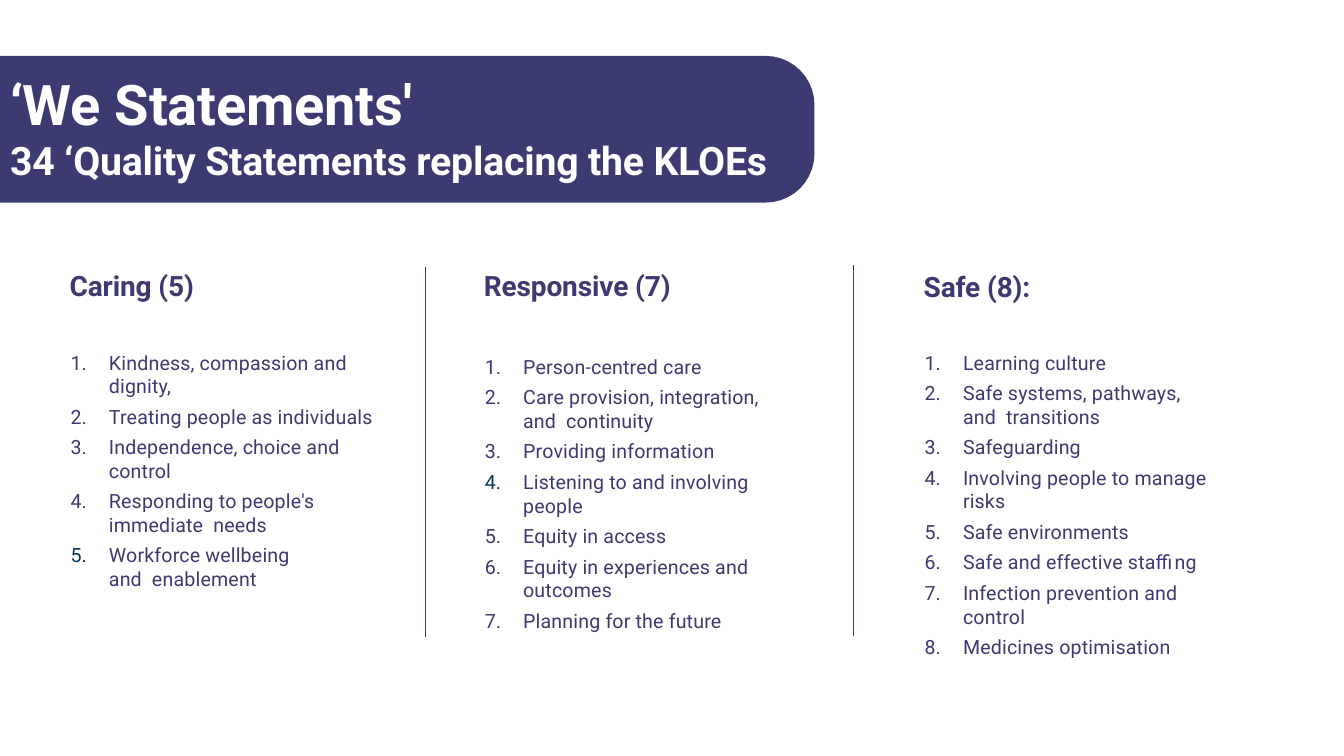
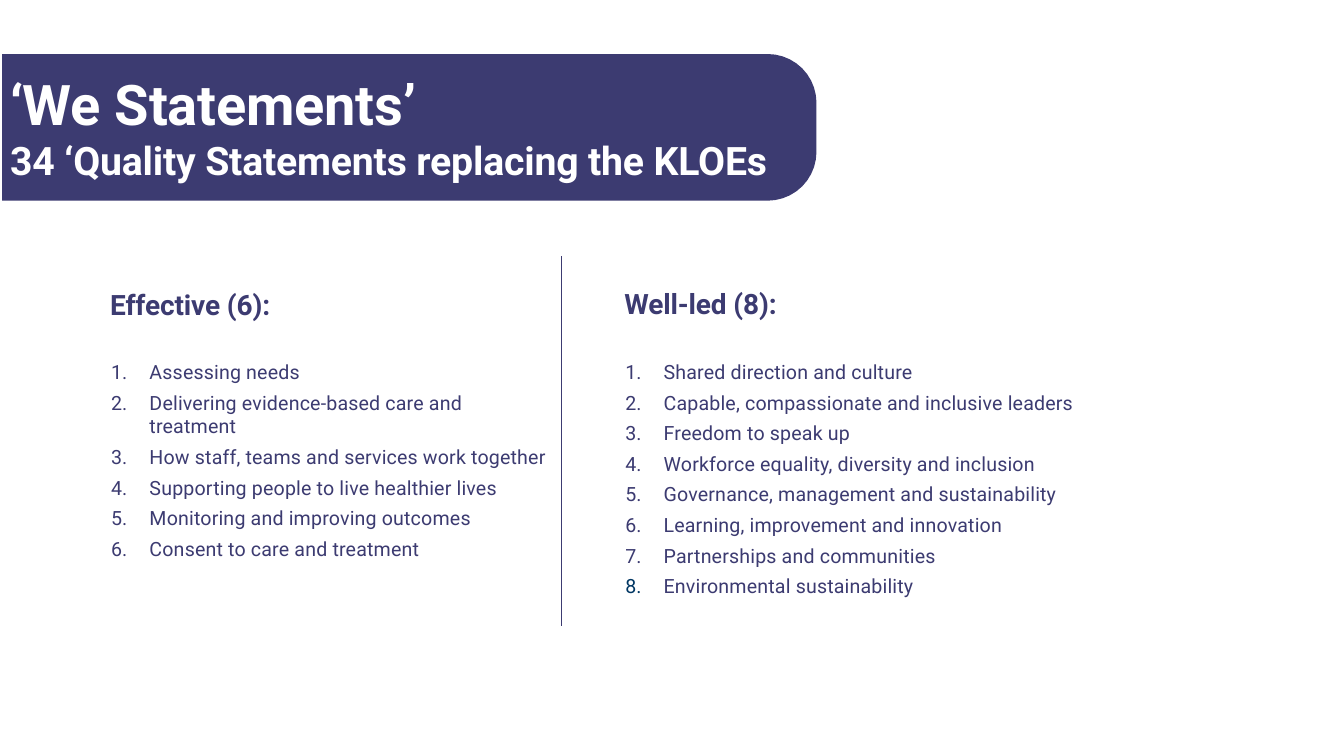
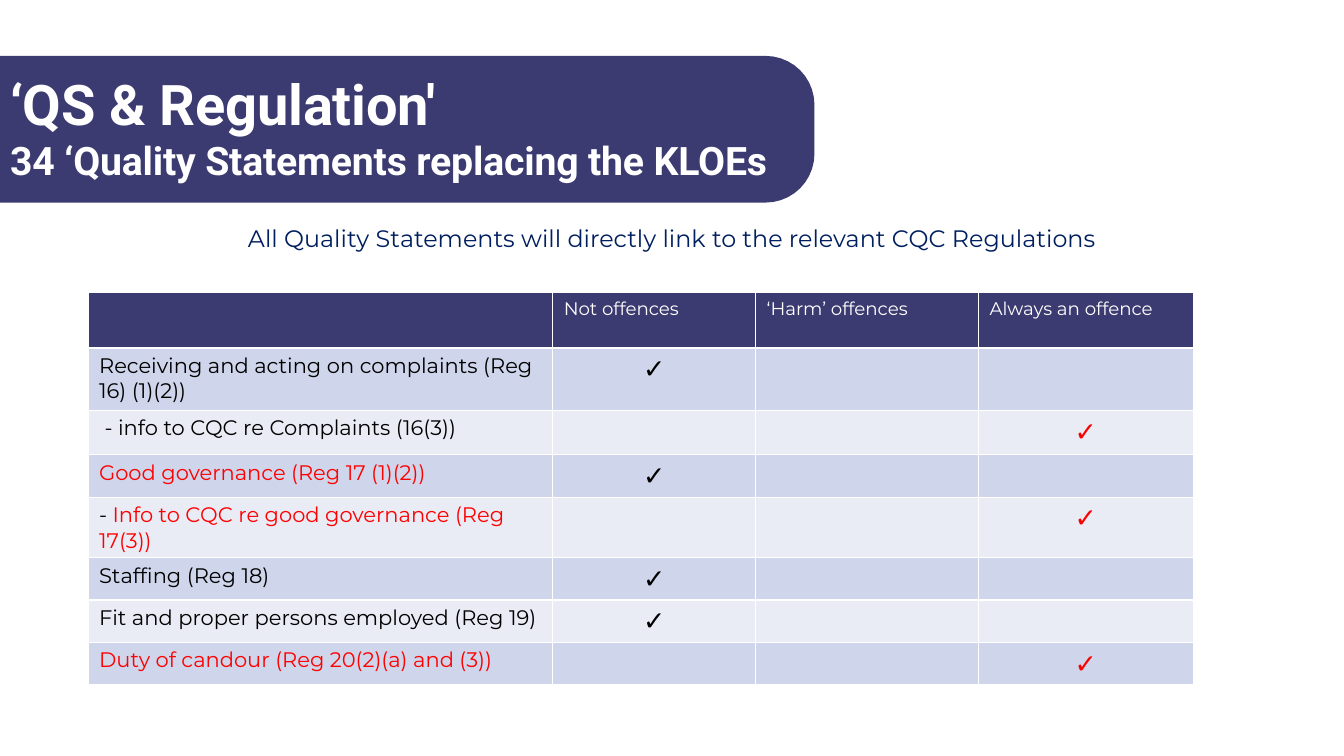
from dataclasses import dataclass
from math import cos, pi, sin

from lxml import etree
from pptx import Presentation
from pptx import util as u
from pptx.dml.color import RGBColor
from pptx.enum import shapes, text
from pptx.oxml import ns


@dataclass(frozen=True)
class Theme:
    navy: str = "3C3B71"
    white: str = "FFFFFF"
    black: str = "000000"
    red: str = "FF0000"
    caption: str = "001F5F"
    number: str = "003763"
    row_fills: tuple = ("CFD5EA", "E9EBF5")
    font: str = "Roboto"
    table_font: str = "Montserrat"
    title: float = 40
    subtitle: float = 28
    heading: float = 20
    item: float = 14
    note: float = 17
    column_head: float = 13
    cell: float = 15
    tick: float = 19


T = Theme()
WIDTH, HEIGHT = u.Inches(13.333), u.Inches(7.5)
SUBTITLE = "34 ‘Quality Statements replacing the KLOEs"
LEFT, CENTER = text.PP_ALIGN.LEFT, text.PP_ALIGN.CENTER
NOT_OFFENCE, ALWAYS = 1, 3

CARING = ["Kindness, compassion and dignity,", "Treating people as individuals",
          "Independence, choice and control", "Responding to people's immediate  needs",
          "Workforce wellbeing and  enablement"]
RESPONSIVE = ["Person-centred care", "Care provision, integration, and  continuity",
              "Providing information", "Listening to and involving people",
              "Equity in access", "Equity in experiences and outcomes",
              "Planning for the future"]
SAFE = ["Learning culture", "Safe systems, pathways, and  transitions", "Safeguarding",
        "Involving people to manage risks", "Safe environments",
        "Safe and effective staffing", "Infection prevention and control",
        "Medicines optimisation"]
EFFECTIVE = ["Assessing needs", "Delivering evidence-based care and treatment",
             "How staff, teams and services work together",
             "Supporting people to live healthier lives",
             "Monitoring and improving outcomes", "Consent to care and treatment"]
WELL_LED = ["Shared direction and culture", "Capable, compassionate and inclusive leaders",
            "Freedom to speak up", "Workforce equality, diversity and inclusion",
            "Governance, management and sustainability",
            "Learning, improvement and innovation", "Partnerships and communities",
            "Environmental sustainability"]

HEADERS = ["", "Not offences", "‘Harm’ offences", "Always an offence"]
REGULATIONS = [  # label runs with their colours, ticked column, tick colour
    ([("Receiving and acting on complaints (Reg 16) (1)(2))", T.black)], NOT_OFFENCE, T.black),
    ([(" - info to CQC re Complaints (16(3))", T.black)], ALWAYS, T.red),
    ([("Good governance (Reg 17 (1)(2))", T.red)], NOT_OFFENCE, T.black),
    ([("- ", T.black), ("Info to CQC re good governance (Reg 17(3))", T.red)], ALWAYS, T.red),
    ([("Staffing (Reg 18)", T.black)], NOT_OFFENCE, T.black),
    ([("Fit and proper persons employed (Reg 19)", T.black)], NOT_OFFENCE, T.black),
    ([("Duty of candour (Reg 20(2)(a) and (3))", T.red)], ALWAYS, T.red),
]


def across(share):
    """Percent of the slide's width."""
    return u.Emu(round(WIDTH * share / 100))


def down(share):
    """Percent of the slide's height."""
    return u.Emu(round(HEIGHT * share / 100))


def place(x, y, w, h):
    return across(x), down(y), across(w), down(h)


def set_all(obj, values):
    for name, value in values.items():
        setattr(obj, name, value)


def add_run(p, words, size, color, font=T.font, bold=False, spacing=0):
    """Add a run; spacing is in hundredths of a point."""
    r = p.add_run()
    r.text = words
    set_all(r.font, dict(size=u.Pt(size), name=font, bold=bold))
    r.font.color.rgb = RGBColor.from_string(color)
    if spacing:
        r._r.get_or_add_rPr().set("spc", str(spacing))


def set_frame(tf, top=0.01, anchor=text.MSO_ANCHOR.TOP):
    set_all(tf, dict(margin_left=0, margin_right=0, margin_bottom=0,
                     margin_top=u.Inches(top), vertical_anchor=anchor,
                     word_wrap=True, auto_size=text.MSO_AUTO_SIZE.SHAPE_TO_FIT_TEXT))
    return tf


def add_text(s, at, top=0.01):
    return set_frame(s.shapes.add_textbox(*place(*at)).text_frame, top)


def add_band(s, x, y, w=60.6, h=19.4):
    """Draw the title band, rounded at its right corners, behind everything."""
    left, top, width, height = place(x, y, w, h)
    radius = height / 3
    cx = left + width - radius
    corners = ((top + radius, -pi / 2), (top + height - radius, 0))
    arc = [(cx + radius * cos(start + i * pi / 20), cy + radius * sin(start + i * pi / 20))
           for cy, start in corners for i in range(11)]
    outline = s.shapes.build_freeform(left, top)
    outline.add_line_segments(arc + [(left, top + height)], close=True)
    band = outline.convert_to_shape()
    band.shadow.inherit = False
    band.fill.solid()
    band.fill.fore_color.rgb = RGBColor.from_string(T.navy)
    band.line.fill.background()
    s.shapes._spTree.insert(2, band._element)


def add_slide(prs, title, band_at=(0, 7.4)):
    s = prs.slides.add_slide(prs.slide_layouts[5])
    add_band(s, *band_at)
    sp = s.shapes.title
    left, top, width, height = place(0.75, 8.67, 58.6, 15.6)
    set_all(sp, dict(left=left, top=top, width=width, height=height))
    tf = set_frame(sp.text_frame, anchor=text.MSO_ANCHOR.BOTTOM)
    lines = ((tf.paragraphs[0], title, T.title), (tf.add_paragraph(), SUBTITLE, T.subtitle))
    for p, words, size in lines:
        p.alignment = LEFT
        add_run(p, words, size, T.white, bold=True, spacing=-10)
    return s


def number(p, color=None):
    """Number the paragraph 1., 2., ... with a hanging indent."""
    pPr = p._p.get_or_add_pPr()
    pPr.set("marL", str(u.Inches(0.39)))
    pPr.set("indent", str(u.Inches(-0.38)))
    if color:
        clr = etree.SubElement(pPr, ns.qn("a:buClr"))
        etree.SubElement(clr, ns.qn("a:srgbClr")).set("val", color)
    etree.SubElement(pPr, ns.qn("a:buFont")).set("typeface", T.font)
    etree.SubElement(pPr, ns.qn("a:buAutoNum")).set("type", "arabicPeriod")


def add_statements(s, heading, items, x, w, head_y, list_y, list_h, accent=None):
    """Add a heading and its numbered list; accent is the item with a darker number."""
    p = add_text(s, (x, head_y, w, 4.67)).paragraphs[0]
    add_run(p, heading, T.heading, T.navy, bold=True, spacing=-10)
    tf = add_text(s, (x, list_y, w, list_h), top=0.08)
    for i, item in enumerate(items, 1):
        p = tf.paragraphs[0] if i == 1 else tf.add_paragraph()
        number(p, T.number if i == accent else None)
        if i > 1:
            p.space_before = u.Pt(5)
        # a double space keeps its two words on one line
        add_run(p, item.replace("  ", chr(160) * 2), T.item, T.navy, spacing=10)


def add_divider(s, x, y, h=49):
    line = s.shapes.add_connector(shapes.MSO_CONNECTOR.STRAIGHT,
                                  across(x), down(y), across(x), down(y + h))
    line.line.width = u.Pt(0.5)
    line.line.color.rgb = RGBColor.from_string(T.navy)
    etree.SubElement(line._element.spPr, ns.qn("a:effectLst"))


def style_cell(cell, fill):
    tcPr = cell._tc.get_or_add_tcPr()
    for side in ("lnL", "lnR", "lnT", "lnB"):
        ln = etree.SubElement(tcPr, ns.qn(f"a:{side}"))
        ln.set("w", str(u.Pt(1)))
        solid = etree.SubElement(ln, ns.qn("a:solidFill"))
        etree.SubElement(solid, ns.qn("a:srgbClr")).set("val", T.white)
    cell.fill.solid()
    cell.fill.fore_color.rgb = RGBColor.from_string(fill)
    set_all(cell, dict(margin_left=u.Inches(0.11), margin_right=u.Inches(0.11)))


def add_regulations(s, x, y, widths, heights):
    table = s.shapes.add_table(len(heights), len(widths),
                               *place(x, y, sum(widths), sum(heights))).table
    set_all(table, dict(first_row=False, horz_banding=False))
    for column, w in zip(table.columns, widths):
        column.width = across(w)
    for i, (row, h) in enumerate(zip(table.rows, heights)):
        row.height = down(h)
        for cell in row.cells:
            style_cell(cell, T.row_fills[(i - 1) % 2] if i else T.navy)
    for j, header in enumerate(HEADERS):
        if header:
            add_run(table.cell(0, j).text_frame.paragraphs[0], header,
                    T.column_head, T.white, T.table_font)
    for i, (label, ticked, color) in enumerate(REGULATIONS, 1):
        p = table.cell(i, 0).text_frame.paragraphs[0]
        for words, run_color in label:
            add_run(p, words, T.cell, run_color, T.table_font)
        p = table.cell(i, ticked).text_frame.paragraphs[0]
        p.alignment = CENTER
        add_run(p, "✓", T.tick, color, T.table_font)


def main():
    prs = Presentation()
    set_all(prs, dict(slide_width=WIDTH, slide_height=HEIGHT))

    s = add_slide(prs, "‘We Statements'")
    add_statements(s, "Caring (5)", CARING, 5.18, 24.9, 35.33, 45.33, 34.1, accent=5)
    add_statements(s, "Responsive (7)", RESPONSIVE, 36, 23.25, 35.33, 45.87, 35, accent=4)
    add_statements(s, "Safe (8):", SAFE, 68.73, 23.8, 35.47, 45.33, 39)
    add_divider(s, 31.65, 35.33)
    add_divider(s, 63.52, 35.07)

    s = add_slide(prs, "‘We Statements’", band_at=(0.15, 7.15))
    add_statements(s, "Effective (6):", EFFECTIVE, 8.2, 32.7, 37.87, 46.6, 27.7)
    add_statements(s, "Well-led (8):", WELL_LED, 46.45, 41.1, 37.8, 46.6, 32.8, accent=8)
    add_divider(s, 41.78, 33.87)

    s = add_slide(prs, "‘QS & Regulation'")
    p = add_text(s, (2.55, 30, 94.9, 8.8), top=0).paragraphs[0]
    set_all(p, dict(alignment=CENTER, line_spacing=0.9))
    add_run(p, "All Quality Statements will directly link to the relevant CQC Regulations",
            T.note, T.caption, T.table_font)
    add_regulations(s, 6.55, 38.7, [34.58, 15.1, 16.58, 15.98],
                    [7.33, 8.27, 5.87] + [5.6] * 5)

    prs.save("out.pptx")


if __name__ == "__main__":
    main()
